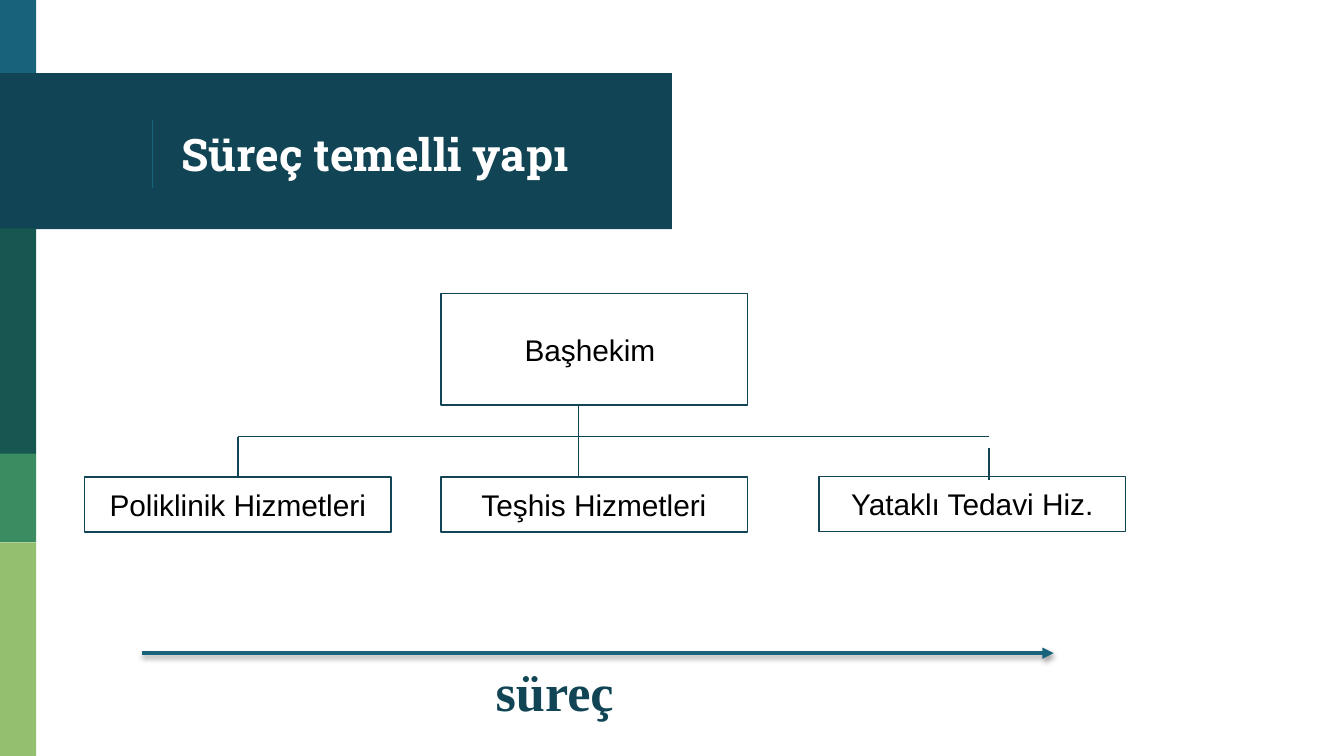
from lxml.etree import SubElement
from pptx import Presentation
from pptx.dml.color import RGBColor
from pptx.enum.shapes import MSO_CONNECTOR as CONNECTOR, MSO_SHAPE as SHAPE
from pptx.enum.text import MSO_ANCHOR as ANCHOR, PP_ALIGN as ALIGN
from pptx.oxml.ns import qn
from pptx.util import Pt

PX = 4572  # EMU per px, 200 px to the inch

THEME = {
    "navy": RGBColor.from_string("114454"),
    "blue": RGBColor.from_string("18637B"),
    "forest": RGBColor.from_string("165751"),
    "green": RGBColor.from_string("3B8D61"),
    "lime": RGBColor.from_string("94BF6E"),
    "white": RGBColor.from_string("FFFFFF"),
    "black": RGBColor.from_string("000000"),
    "title": {"name": "Roboto Slab", "size": Pt(24), "bold": True},
    "unit": {"name": "Arial", "size": Pt(16), "bold": False},
    "process": {"name": "Times New Roman", "size": Pt(28), "bold": True},
    "thin": Pt(0.75),
    "thick": Pt(2),
}


def write(box, words, style, color, frame_format, para_format):
    frame = box.text_frame
    for key, value in frame_format.items():
        setattr(frame, key, value)
    para = frame.paragraphs[0]
    for key, value in para_format.items():
        setattr(para, key, value)
    span = para.add_run()
    span.text = words
    for key, value in THEME[style].items():
        setattr(span.font, key, value)
    span.font.color.rgb = THEME[color]


def draw_line(x1, y1, x2, y2, color="navy", width="thin"):
    line = page.shapes.add_connector(
        CONNECTOR.STRAIGHT, x1 * PX, y1 * PX, x2 * PX, y2 * PX)
    line.line.color.rgb = THEME[color]
    line.line.width = THEME[width]
    effects = SubElement(line._element.spPr, qn("a:effectLst"))
    return line, effects


deck = Presentation()
deck.slide_width, deck.slide_height = 2000 * PX, 1125 * PX
page = deck.slides.add_slide(deck.slide_layouts[6])

# Side strip and title band
for left, top, width, height, color in [
    (0, 0, 54, 116, "blue"),
    (0, 109, 1000, 232, "navy"),
    (0, 340, 54, 336, "forest"),
    (0, 675, 54, 132, "green"),
    (0, 807, 54, 318, "lime"),
]:
    block = page.shapes.add_shape(
        SHAPE.RECTANGLE, left * PX, top * PX, width * PX, height * PX)
    block.fill.solid()
    block.fill.fore_color.rgb = THEME[color]
    block.line.fill.background()
    block.shadow.inherit = False

# Title
draw_line(227, 178, 227, 280, "blue")
title = page.shapes.add_textbox(250 * PX, 116 * PX, 702 * PX, 224 * PX)
insets = {f"margin_{side}": 20 * PX for side in ("left", "top", "right", "bottom")}
write(title, "Süreç temelli yapı", "title", "white",
      {"word_wrap": True, "vertical_anchor": ANCHOR.MIDDLE, **insets}, {})

# Organisation boxes
units = {}
for name, left, top, height in [
    ("Başhekim ", 656, 437, 166),
    ("Yataklı Tedavi Hiz.", 1219, 709, 82),
    ("Teşhis Hizmetleri", 656, 710, 82),
    ("Poliklinik Hizmetleri", 126, 710, 82),
]:
    box = page.shapes.add_shape(
        SHAPE.RECTANGLE, left * PX, top * PX, 456 * PX, height * PX)
    box.fill.solid()
    box.fill.fore_color.rgb = THEME["white"]
    box.line.color.rgb = THEME["navy"]
    box.line.width = THEME["thin"]
    box.shadow.inherit = False
    write(box, name, "unit", "black",
          {"word_wrap": False, "vertical_anchor": ANCHOR.MIDDLE},
          {"alignment": ALIGN.CENTER})
    units[name] = box

# Branches
for ends in [
    (354, 650, 1472, 650),
    (1472, 666, 1472, 714),
    (861, 650, 861, 708),
    (861, 602, 861, 650),
]:
    draw_line(*ends)
clinic_branch, _ = draw_line(354, 650, 354, 710)
clinic_branch.end_connect(units["Poliklinik Hizmetleri"], 0)

# Process arrow
arrow, effects = draw_line(212, 972, 1568, 972, "blue", "thick")
SubElement(arrow.line._get_or_add_ln(), qn("a:tailEnd"), type="triangle")
shadow = SubElement(effects, qn("a:outerShdw"), blurRad=str(Pt(3.1)),
                    dist=str(Pt(1.6)), dir="5400000", rotWithShape="0")
shade = SubElement(shadow, qn("a:srgbClr"), val=str(THEME["black"]))
SubElement(shade, qn("a:alpha"), val="38000")

# Process label
label = page.shapes.add_textbox(718 * PX, 972 * PX, 740 * PX, 114 * PX)
write(label, "süreç", "process", "navy", {"word_wrap": True},
      {"space_before": Pt(3.5)})

deck.save("out.pptx")
